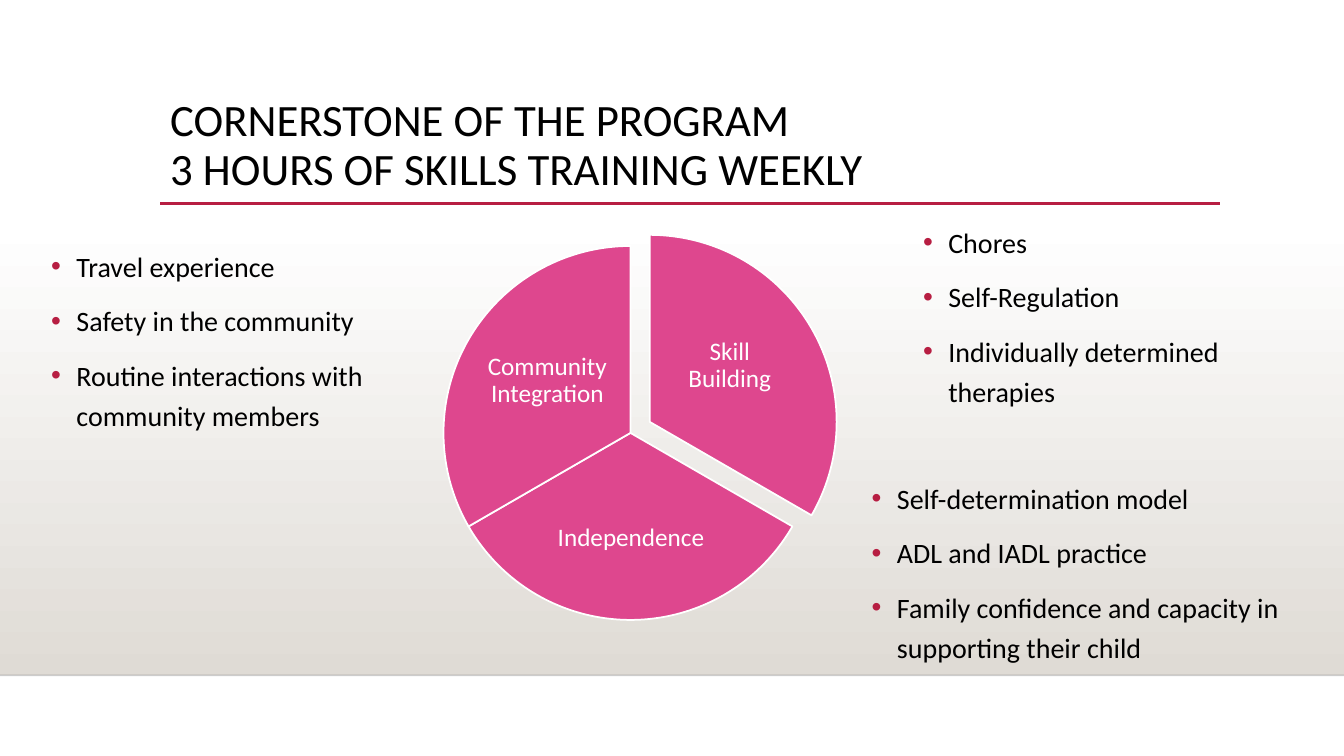
import pptx
import pptx.util
import pptx.dml.color
import pptx.enum.shapes
import pptx.enum.text
import pptx.oxml.ns
from lxml import etree

THEME = {
    "font": "Calibri", "title": 32, "body": 20, "label": 18,
    "text": "000000", "light": "FFFFFF", "accent": "B71E42",
    "slice": "DE478E", "floor": "DFDBD5", "edge": "000001",
}
COLUMNS, ROWS = 160, 90
ANCHOR = pptx.enum.text.MSO_ANCHOR
ALIGN = pptx.enum.text.PP_ALIGN
SHAPE = pptx.enum.shapes.MSO_SHAPE

deck = pptx.Presentation()
deck.slide_width = pptx.util.Inches(COLUMNS / 12)
deck.slide_height = pptx.util.Inches(ROWS / 12)
page = deck.slides.add_slide(deck.slide_layouts[6])
cell = deck.slide_height / ROWS


def grid(*cells):
    return [round(number * cell) for number in cells]


def add_text(shapes, place, text, size, color="text", align=ALIGN.LEFT,
             anchor=ANCHOR.TOP, spacing=0.9, inset=None, bullets=False):
    box = shapes.add_textbox(*grid(*place))
    frame = box.text_frame
    frame.word_wrap = True
    frame.vertical_anchor = anchor
    if inset is not None:
        frame.margin_left = frame.margin_right = pptx.util.Inches(inset)
        frame.margin_top = frame.margin_bottom = pptx.util.Inches(inset)
    for index, line in enumerate(text.split("\n")):
        para = frame.add_paragraph() if index else frame.paragraphs[0]
        para.text = line
        if bullets:
            props = para._p.get_or_add_pPr()
            props.set("marL", str(pptx.util.Inches(0.25)))
            props.set("indent", str(-pptx.util.Inches(0.25)))
            tint = etree.SubElement(props, pptx.oxml.ns.qn("a:buClr"))
            etree.SubElement(tint, pptx.oxml.ns.qn("a:srgbClr"), val=THEME["accent"])
            etree.SubElement(props, pptx.oxml.ns.qn("a:buFont"), typeface="Arial")
            etree.SubElement(props, pptx.oxml.ns.qn("a:buChar"), char="•")
        para.alignment = align
        para.line_spacing = spacing
        if index:
            para.space_before = pptx.util.Pt(10)
        for span in para.runs:
            span.font.name = THEME["font"]
            span.font.size = pptx.util.Pt(THEME[size])
            span.font.color.rgb = pptx.dml.color.RGBColor.from_string(THEME[color])


# Shaded floor
floor_top, floor_bottom = 26.52, 80.4
floor = page.shapes.add_shape(
    SHAPE.RECTANGLE, *grid(0, floor_top, COLUMNS, floor_bottom - floor_top))
floor.shadow.inherit = False
floor.line.fill.background()
floor.fill.gradient()
floor.fill.gradient_angle = 270
for stop, position, color in zip(floor.fill.gradient_stops, (0, 1), ("light", "floor")):
    stop.position = position
    stop.color.rgb = pptx.dml.color.RGBColor.from_string(THEME[color])

# Floor edge and title rule: left, right, row, colour, weight, opacity
for left, right, row, color, weight, opacity in (
    (0, COLUMNS, floor_bottom, "edge", 1, 20),
    (19.08, 145.2, 24.24, "accent", 2.5, 100),
):
    rule = page.shapes.add_connector(
        pptx.enum.shapes.MSO_CONNECTOR.STRAIGHT, *grid(left, row, right, row))
    rule.line.width = pptx.util.Pt(weight)
    rule.line.color.rgb = pptx.dml.color.RGBColor.from_string(THEME[color])
    if opacity < 100:
        tint = rule.line._ln.find(".//" + pptx.oxml.ns.qn("a:srgbClr"))
        etree.SubElement(tint, pptx.oxml.ns.qn("a:alpha"), val=str(opacity * 1000))
    etree.SubElement(rule._element.spPr, pptx.oxml.ns.qn("a:effectLst"))

# Title
add_text(page.shapes, (19.08, 10.56, 126, 13.8),
         "CORNERSTONE OF THE PROGRAM\v3 HOURS OF SKILLS TRAINING WEEKLY",
         "title", anchor=ANCHOR.MIDDLE)

# Pie of three equal slices, clockwise from the top, the first pulled out
wheel = page.shapes.add_group_shape()
diameter = 44.52
for index, (name, left, top, label_place) in enumerate((
    ("Skill Building", 55.08, 27.96, (79.32, 36.12, 15.12, 14.88)),
    ("Independence", 52.8, 29.28, (65.04, 57.24, 20.16, 13.8)),
    ("Community Integration", 52.8, 29.28, (57.6, 37.92, 15.12, 14.88)),
)):
    wedge = wheel.shapes.add_shape(SHAPE.PIE, *grid(left, top, diameter, diameter))
    start = 270 + 120 * index
    # Adjustment units: 0.6 per degree
    wedge.adjustments[0] = start % 360 * 0.6
    wedge.adjustments[1] = (start + 120) % 360 * 0.6
    wedge.shadow.inherit = False
    wedge.fill.solid()
    wedge.fill.fore_color.rgb = pptx.dml.color.RGBColor.from_string(THEME["slice"])
    wedge.line.color.rgb = pptx.dml.color.RGBColor.from_string(THEME["light"])
    wedge.line.width = pptx.util.Pt(1.25)
    add_text(wheel.shapes, label_place, name, "label", color="light",
             align=ALIGN.CENTER, anchor=ANCHOR.MIDDLE, inset=0.03)

# Bullet lists beside the slices
for left, top, width, lines in (
    (108.72, 25.44, 43.92,
     "Chores\nSelf-Regulation\nIndividually determined therapies"),
    (102.6, 55.92, 62.04,
     "Self-determination model\nADL and IADL practice\n"
     "Family confidence and capacity in supporting their child"),
    (4.92, 28.32, 43.92,
     "Travel experience\nSafety in the community\n"
     "Routine interactions with community members"),
):
    # Keep each list within the right edge of the slide
    add_text(page.shapes, (left, top, min(width, COLUMNS - left), 23.52), lines,
             "body", spacing=1.2, bullets=True)

deck.save("out.pptx")
